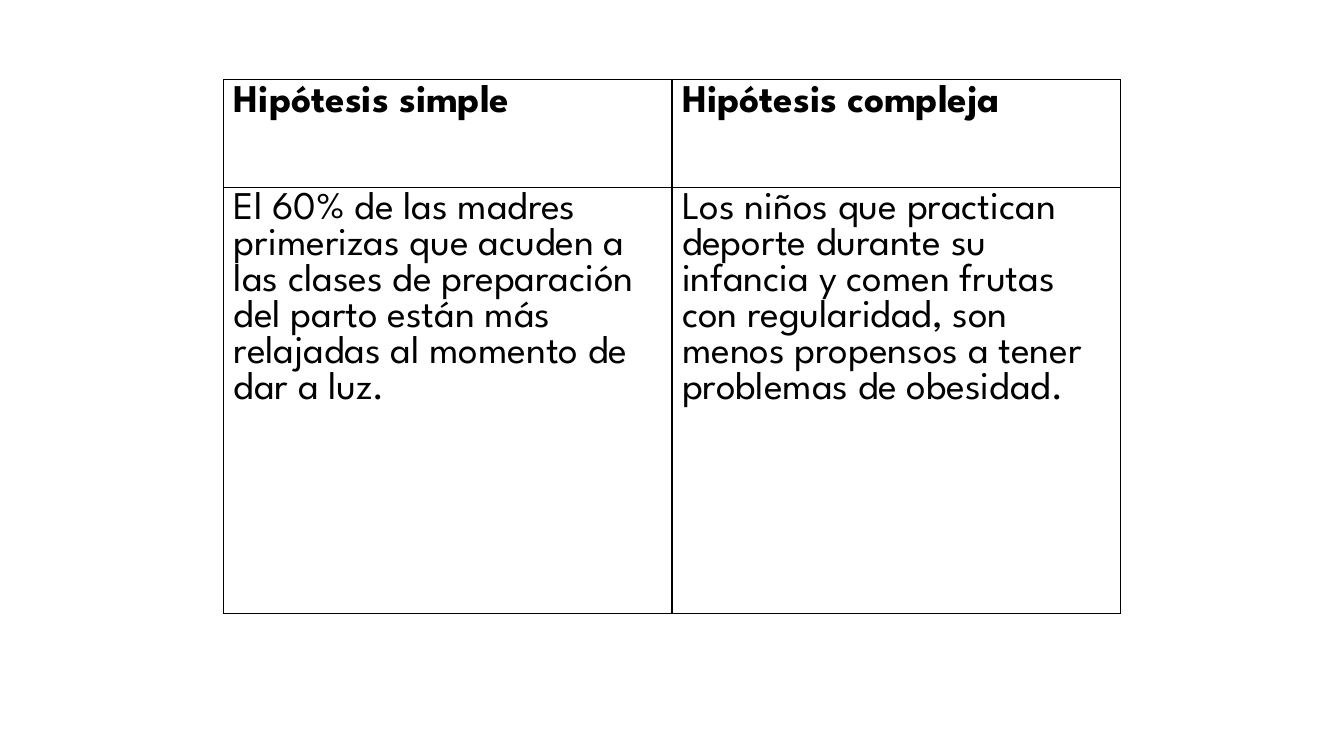
from dataclasses import dataclass

import pptx
import pptx.dml.color
import pptx.oxml
import pptx.oxml.ns
import pptx.util
from pptx.util import Inches


@dataclass(frozen=True)
class Theme:
    font: str = "League Spartan"
    text_size: int = 28
    ink: str = "000000"
    paper: str = "FFFFFF"
    border_width: int = 1


@dataclass(frozen=True)
class Hypothesis:
    heading: str
    example: str


THEME = Theme()

HYPOTHESES = [
    Hypothesis(
        "Hipótesis simple",
        "El 60% de las madres primerizas que acuden a las clases de "
        "preparación del parto están más relajadas al momento de dar a luz.",
    ),
    Hypothesis(
        "Hipótesis compleja",
        "Los niños que practican deporte durante su infancia y comen frutas "
        "con regularidad, son menos propensos a tener problemas de obesidad.",
    ),
]

TABLE_LEFT, TABLE_TOP, TABLE_WIDTH = 2.22, 0.79, 8.89
ROW_HEIGHTS = [1.07, 4.23]


def add_borders(cell: pptx.table._Cell) -> None:
    """Draw a solid line on all four sides of a cell."""
    properties = cell._tc.get_or_add_tcPr()
    width = pptx.util.Pt(THEME.border_width)
    for position, side in enumerate(("lnL", "lnR", "lnT", "lnB")):
        border = pptx.oxml.parse_xml(
            f'<a:{side} {pptx.oxml.ns.nsdecls("a")} w="{width}">'
            f'<a:solidFill><a:srgbClr val="{THEME.ink}"/></a:solidFill>'
            f"</a:{side}>"
        )
        # Borders come before the fill in the cell properties
        properties.insert(position, border)


def fill_cell(cell: pptx.table._Cell, text: str, bold: bool) -> None:
    """Write one cell and give it its fill, font and borders."""
    cell.fill.solid()
    cell.fill.fore_color.rgb = pptx.dml.color.RGBColor.from_string(THEME.paper)
    cell.text = text
    font = cell.text_frame.paragraphs[0].font
    font.name = THEME.font
    font.size = pptx.util.Pt(THEME.text_size)
    font.bold = bold
    font.color.rgb = pptx.dml.color.RGBColor.from_string(THEME.ink)
    add_borders(cell)


def add_hypothesis_table(slide: pptx.slide.Slide) -> None:
    """Add the table with one column for each kind of hypothesis."""
    table = slide.shapes.add_table(
        len(ROW_HEIGHTS), len(HYPOTHESES),
        Inches(TABLE_LEFT), Inches(TABLE_TOP),
        Inches(TABLE_WIDTH), Inches(sum(ROW_HEIGHTS)),
    ).table
    table.horz_banding = False

    for row, height in zip(table.rows, ROW_HEIGHTS):
        row.height = Inches(height)
    for column, hypothesis in enumerate(HYPOTHESES):
        fill_cell(table.cell(0, column), hypothesis.heading, bold=True)
        fill_cell(table.cell(1, column), hypothesis.example, bold=False)


def main() -> None:
    # Slide
    presentation = pptx.Presentation()
    presentation.slide_width = Inches(13.33)
    presentation.slide_height = Inches(7.5)
    slide = presentation.slides.add_slide(presentation.slide_layouts[6])

    # Comparison table
    add_hypothesis_table(slide)

    presentation.save("out.pptx")


if __name__ == "__main__":
    main()
